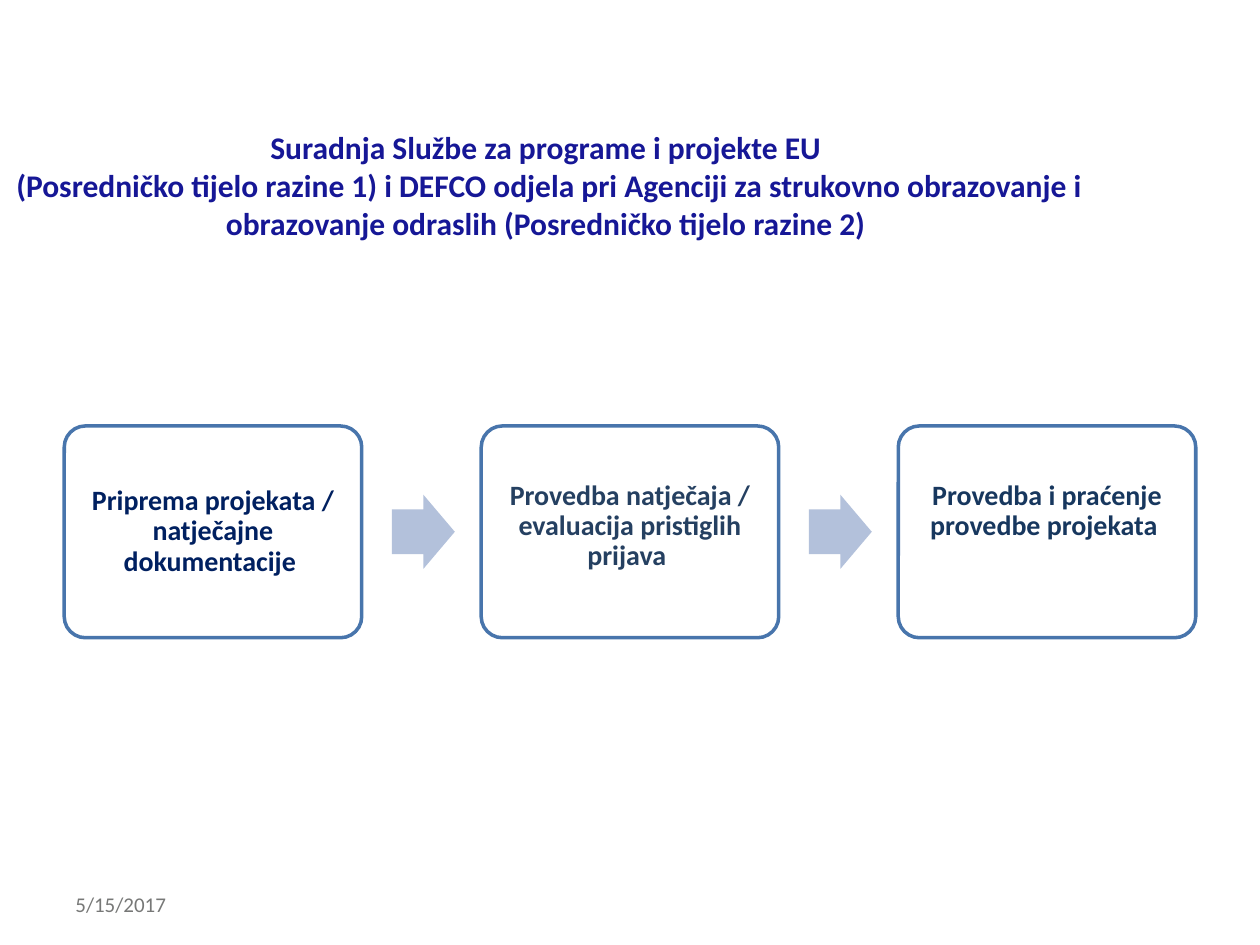
import pptx
import pptx.dml.color
import pptx.enum.shapes
import pptx.enum.text
import pptx.util
from dataclasses import dataclass

Pt = pptx.util.Pt
RGB = pptx.dml.color.RGBColor.from_string
Shape = pptx.enum.shapes.MSO_SHAPE
Align = pptx.enum.text.PP_ALIGN
Anchor = pptx.enum.text.MSO_ANCHOR


@dataclass(frozen=True)
class Theme:
    font: str = "Calibri"
    title: str = "161796"
    date: str = "777877"
    box_fill: str = "FFFFFF"
    box_line: str = "4875AC"
    arrow: str = "B3C1DB"
    title_size: float = 18
    step_size: float = 16
    date_size: float = 12


@dataclass(frozen=True)
class Step:
    text: str
    color: str
    anchor: Anchor
    top_inset: float


THEME = Theme()
STEPS = [
    Step("Priprema projekata / natječajne dokumentacije ", "002060", Anchor.MIDDLE, 5),
    Step("Provedba natječaja / evaluacija pristiglih prijava ", "254061", Anchor.TOP, 28),
    Step("Provedba i praćenje provedbe projekata ", "17375E", Anchor.TOP, 28),
]
BOX_LEFT, BOX_TOP, BOX_W, BOX_H = 36.7, 243.4, 170, 121
STEP_PITCH = 238.3
ARROW_GAP, ARROW_W, ARROW_H = 17.2, 36, 42.5


def style(p, size: float, color: str, bold: bool, align: Align) -> None:
    p.alignment = align
    p.font.name = THEME.font
    p.font.size = Pt(size)
    p.font.bold = bold
    p.font.color.rgb = RGB(color)


def add_text(s, text: str, left: float, top: float, width: float, height: float,
             size: float, color: str, bold: bool, align: Align) -> None:
    sp = s.shapes.add_textbox(Pt(left), Pt(top), Pt(width), Pt(height))
    tf = sp.text_frame
    tf.word_wrap = True
    tf.vertical_anchor = Anchor.MIDDLE
    p = tf.paragraphs[0]
    p.text = text
    style(p, size, color, bold, align)


def add_step(s, step: Step, left: float) -> None:
    sp = s.shapes.add_shape(Shape.ROUNDED_RECTANGLE, Pt(left), Pt(BOX_TOP), Pt(BOX_W), Pt(BOX_H))
    sp.shadow.inherit = False
    sp.adjustments[0] = 0.1
    sp.fill.solid()
    sp.fill.fore_color.rgb = RGB(THEME.box_fill)
    sp.line.color.rgb = RGB(THEME.box_line)
    sp.line.width = Pt(2)
    tf = sp.text_frame
    tf.word_wrap = True
    tf.vertical_anchor = step.anchor
    tf.margin_left = tf.margin_right = tf.margin_bottom = Pt(5)
    tf.margin_top = Pt(step.top_inset)
    p = tf.paragraphs[0]
    p.text = step.text
    p.line_spacing = 0.9
    style(p, THEME.step_size, step.color, True, Align.CENTER)


def add_arrow(s, left: float) -> None:
    top = BOX_TOP + (BOX_H - ARROW_H) / 2
    sp = s.shapes.add_shape(Shape.RIGHT_ARROW, Pt(left), Pt(top), Pt(ARROW_W), Pt(ARROW_H))
    sp.shadow.inherit = False
    sp.adjustments[0] = 0.6
    sp.adjustments[1] = 0.5
    sp.fill.solid()
    sp.fill.fore_color.rgb = RGB(THEME.arrow)
    sp.line.fill.background()


def main() -> None:
    prs = pptx.Presentation()
    prs.slide_width, prs.slide_height = Pt(720), Pt(540)
    s = prs.slides.add_slide(prs.slide_layouts[6])
    add_text(s, "5/15/2017", 36, 502.5, 168, 28.8,
             THEME.date_size, THEME.date, False, Align.LEFT)
    add_text(s, "Suradnja Službe za programe i projekte EU \v"
             "(Posredničko tijelo razine 1) i DEFCO odjela pri Agenciji za strukovno "
             "obrazovanje i obrazovanje odraslih (Posredničko tijelo razine 2) ",
             -10, 60.5, 648, 90, THEME.title_size, THEME.title, True, Align.CENTER)
    for i, step in enumerate(STEPS):
        left = BOX_LEFT + i * STEP_PITCH
        add_step(s, step, left)
        if i < len(STEPS) - 1:
            add_arrow(s, left + BOX_W + ARROW_GAP)
    prs.save("out.pptx")


if __name__ == "__main__":
    main()
